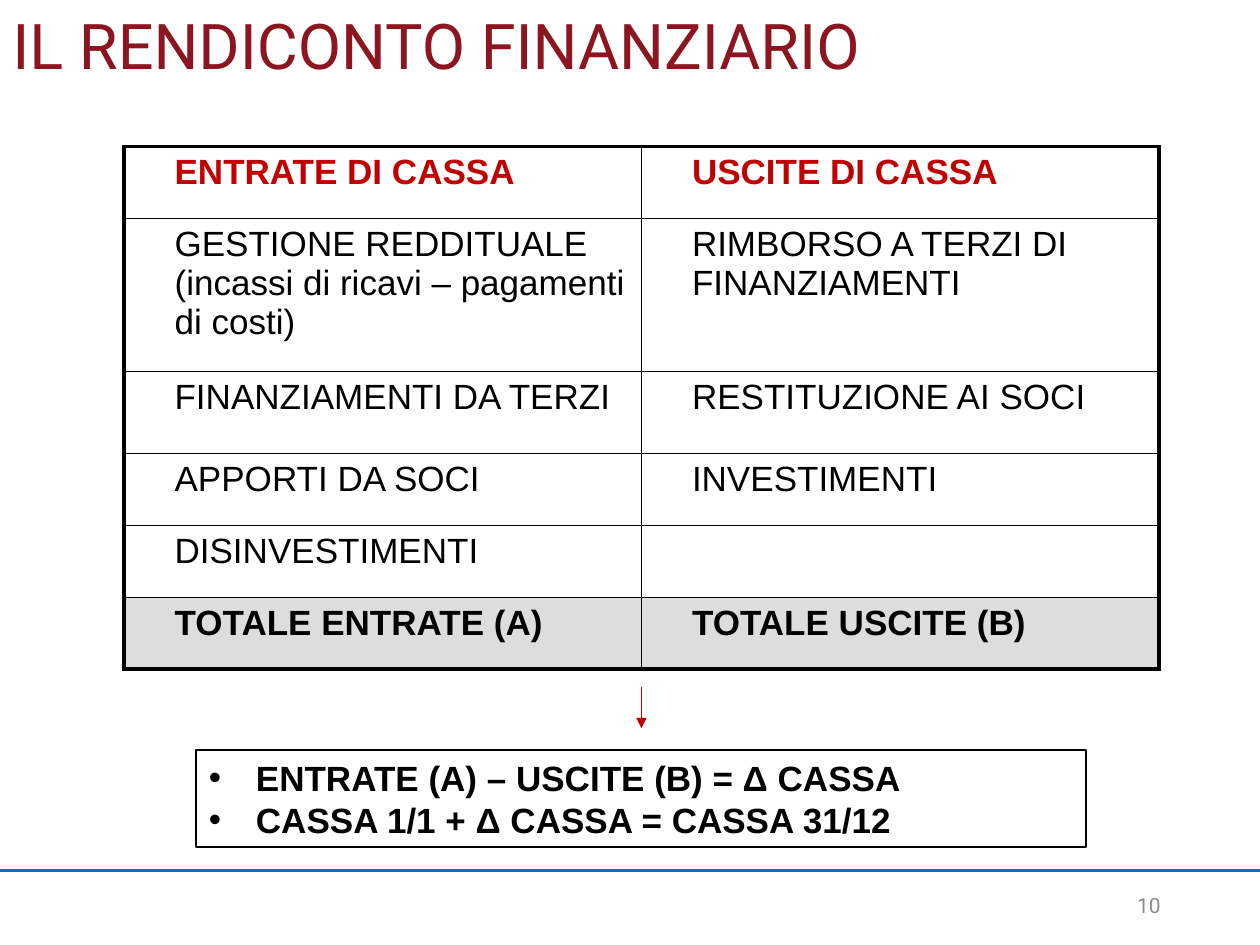
from dataclasses import dataclass

from lxml.etree import SubElement
from pptx import Presentation
from pptx.dml.color import RGBColor
from pptx.enum.shapes import MSO_CONNECTOR, MSO_SHAPE
from pptx.enum.text import MSO_ANCHOR, PP_ALIGN
from pptx.oxml.ns import qn
from pptx.util import Cm, Pt


@dataclass(frozen=True)
class Theme:
    body_font: str = "Arial"
    title_font: str = "Roboto"
    black: str = "000000"
    red: str = "C00000"
    title: str = "8C151F"
    rule: str = "0A71B4"
    total_fill: str = "DDDDDD"
    number: str = "8C8C8C"
    title_size: int = 36
    body_size: int = 20
    number_size: int = 12
    thin: float = 1
    thick: float = 2.25


def set_values(target, values):
    for name, value in values.items():
        setattr(target, name, value)


class SlideBuilder:
    def __init__(self, page, theme):
        self.page = page
        self.theme = theme

    def add_span(self, para, text, color, size, font, bold=False, **layout):
        set_values(para, layout)
        span = para.add_run()
        span.text = text
        set_values(span.font, {"name": font, "size": Pt(size), "bold": bold})
        span.font.color.rgb = RGBColor.from_string(color)

    def text(self, place, text, color, size, align=PP_ALIGN.LEFT):
        box = self.page.shapes.add_textbox(*map(Cm, place))
        box.text_frame.word_wrap = True
        self.add_span(box.text_frame.paragraphs[0], text, color, size,
                      self.theme.title_font, alignment=align)

    def line(self, start, end, color, width, arrow=False):
        line = self.page.shapes.add_connector(
            MSO_CONNECTOR.STRAIGHT, *map(Cm, start + end))
        line.line.color.rgb = RGBColor.from_string(color)
        line.line.width = Pt(width)
        properties = line._element.spPr
        if arrow:
            SubElement(properties.find(qn("a:ln")), qn("a:tailEnd"), type="triangle")
        SubElement(properties, qn("a:effectLst"))

    def bullet_box(self, place, lines):
        theme = self.theme
        box = self.page.shapes.add_shape(MSO_SHAPE.RECTANGLE, *map(Cm, place))
        box.shadow.inherit = False
        box.fill.background()
        box.line.color.rgb = RGBColor.from_string(theme.black)
        box.line.width = Pt(1.25)
        frame = box.text_frame
        set_values(frame, {"word_wrap": True, "vertical_anchor": MSO_ANCHOR.TOP})
        for index, text in enumerate(lines):
            para = frame.add_paragraph() if index else frame.paragraphs[0]
            # Spacing goes in first so that the bullet follows it
            para.line_spacing = Pt(24)
            properties = para._p.get_or_add_pPr()
            indent = Cm(0.95)
            properties.set("marL", str(indent))
            properties.set("indent", str(-indent))
            SubElement(properties, qn("a:buFont"), typeface=theme.body_font)
            SubElement(properties, qn("a:buChar"), char="•")
            self.add_span(para, text, theme.black, theme.body_size,
                          theme.body_font, bold=True, alignment=PP_ALIGN.LEFT)

    def borders(self, cell, widths):
        properties = cell._tc.get_or_add_tcPr()
        for side, width in widths.items():
            edge = SubElement(properties, qn(f"a:ln{side}"), w=str(Pt(width)))
            fill = SubElement(edge, qn("a:solidFill"))
            SubElement(fill, qn("a:srgbClr"), val=self.theme.black)

    def table(self, left, top, column_width, heights, rows):
        theme = self.theme
        columns = len(rows[0])
        table = self.page.shapes.add_table(
            len(rows), columns, Cm(left), Cm(top),
            Cm(column_width * columns), Cm(sum(heights))).table
        for column in table.columns:
            column.width = Cm(column_width)
        last_row, last_column = len(rows) - 1, columns - 1
        for r, texts in enumerate(rows):
            table.rows[r].height = Cm(heights[r])
            for c, text in enumerate(texts):
                cell = table.cell(r, c)
                set_values(cell, {"margin_left": Cm(0.23), "margin_right": Cm(0.23),
                                  "margin_top": Cm(0.13), "margin_bottom": Cm(0.13)})
                # Thick outer frame, thin inner lines
                outer = {"L": c == 0, "R": c == last_column,
                         "T": r == 0, "B": r == last_row}
                self.borders(cell, {side: theme.thick if edge else theme.thin
                                    for side, edge in outer.items()})
                if r == last_row:
                    cell.fill.solid()
                    cell.fill.fore_color.rgb = RGBColor.from_string(theme.total_fill)
                else:
                    cell.fill.background()
                if not text:
                    continue
                strong = r in (0, last_row)
                para = cell.text_frame.paragraphs[0]
                para._p.get_or_add_pPr().set("marL", str(Cm(0.79)))
                self.add_span(para, text, theme.black if r else theme.red,
                              theme.body_size, theme.body_font, bold=strong,
                              alignment=PP_ALIGN.JUSTIFY if strong else PP_ALIGN.LEFT,
                              space_after=Pt(9))


def main():
    deck = Presentation()
    set_values(deck, {"slide_width": Cm(25.4), "slide_height": Cm(19.05)})
    theme = Theme()
    page = deck.slides.add_slide(deck.slide_layouts[6])
    builder = SlideBuilder(page, theme)

    # Footer rule
    builder.line((0, 17.55), (25.4, 17.55), theme.rule, 1.5)

    # Cash inflows and outflows
    builder.table(2.5, 2.95, 10.43, [1.45, 3.09, 1.65, 1.45, 1.45, 1.45], [
        ("ENTRATE DI CASSA", "USCITE DI CASSA"),
        ("GESTIONE REDDITUALE (incassi di ricavi – pagamenti di costi)",
         "RIMBORSO A TERZI DI FINANZIAMENTI"),
        ("FINANZIAMENTI DA TERZI", "RESTITUZIONE AI SOCI"),
        ("APPORTI DA SOCI", "INVESTIMENTI"),
        ("DISINVESTIMENTI", ""),
        ("TOTALE ENTRATE (A)", "TOTALE USCITE (B)"),
    ])

    # Resulting change in cash
    builder.bullet_box((3.96, 15.12, 17.93, 1.96), [
        "ENTRATE (A) – USCITE (B) = Δ CASSA",
        "CASSA 1/1 + Δ CASSA = CASSA 31/12",
    ])

    # Title, arrow and page number
    builder.text((0, 0, 25.4, 2.82), "IL RENDICONTO FINANZIARIO",
                 theme.title, theme.title_size)
    builder.line((12.93, 13.84), (12.93, 14.68), theme.red, 0.5, arrow=True)
    builder.text((17.93, 17.86, 5.72, 1.02), "10",
                 theme.number, theme.number_size, PP_ALIGN.RIGHT)

    deck.save("out.pptx")


if __name__ == "__main__":
    main()
